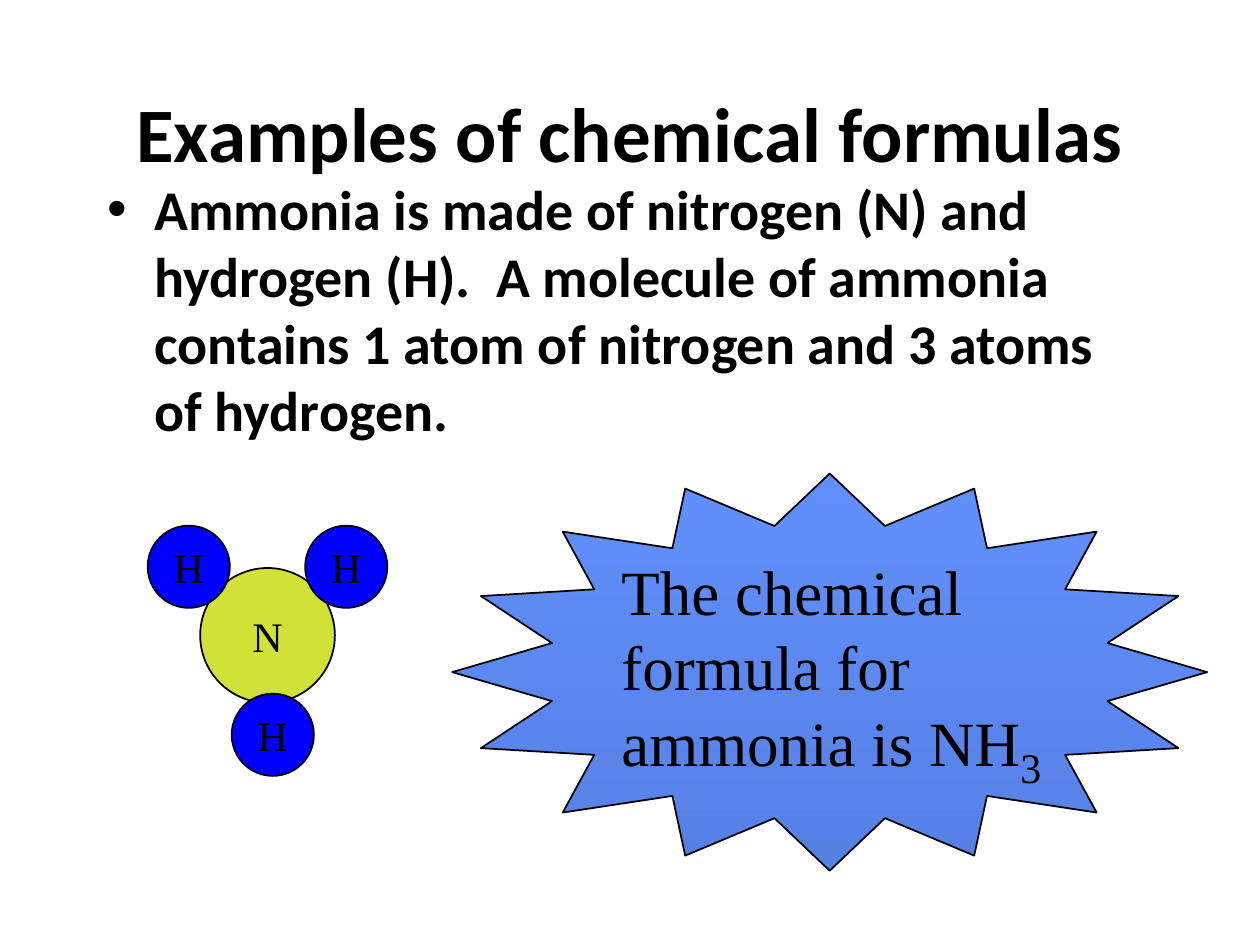
from dataclasses import dataclass

from pptx import Presentation
from pptx.dml.color import RGBColor
from pptx.enum.shapes import MSO_SHAPE
from pptx.enum.text import MSO_ANCHOR, MSO_AUTO_SIZE, PP_ALIGN
from pptx.util import Pt


@dataclass(frozen=True)
class Theme:
    ink: str = "000000"
    core: str = "D1E138"
    atom: str = "0000FF"
    sky: str = "618FFD"
    deep: str = "5780E3"
    sans: str = "Calibri"
    serif: str = "Times New Roman"
    title: int = 44
    body: int = 32
    claim: int = 36
    label: int = 24


def write(frame, text, font, size, color, bold=False, align=None):
    frame.text = text
    par = frame.paragraphs[0]
    par.alignment = align
    par.space_before = Pt(0)
    style = par.runs[0].font
    style.name, style.size, style.bold = font, Pt(size), bold
    style.color.rgb = RGBColor.from_string(color)


class Deck:
    """Draws styled elements on the current slide."""

    def __init__(self, theme):
        self.theme = theme
        self.file = Presentation()
        self.file.slide_width, self.file.slide_height = Pt(720), Pt(540)
        self.slide = self.file.slides.add_slide(self.file.slide_layouts[1])

    def holder(self, index, text, size, box, **form):
        item = self.slide.placeholders[index]
        item.left, item.top, item.width, item.height = map(Pt, box)
        write(item.text_frame, text, self.theme.sans, size, self.theme.ink, bold=True, **form)
        return item

    def group(self):
        return self.slide.shapes.add_group_shape().shapes

    def shape(self, home, kind, box):
        item = home.add_shape(kind, *map(Pt, box))
        item.shadow.inherit = False
        item.line.color.rgb = RGBColor.from_string(self.theme.ink)
        item.line.width = Pt(1)
        return item

    def atom(self, home, text, color, left, top, size):
        item = self.shape(home, MSO_SHAPE.OVAL, (left, top, size, size))
        item.fill.solid()
        item.fill.fore_color.rgb = RGBColor.from_string(color)
        frame = item.text_frame
        frame.word_wrap = False
        frame.vertical_anchor = MSO_ANCHOR.MIDDLE
        write(frame, text, self.theme.serif, self.theme.label, self.theme.ink, align=PP_ALIGN.CENTER)

    def star(self, home, box):
        item = self.shape(home, MSO_SHAPE.STAR_16_POINT, box)
        item.adjustments[0] = 0.375
        item.fill.gradient()
        item.fill.gradient_angle = 270
        for stop, color in zip(item.fill.gradient_stops, (self.theme.sky, self.theme.deep)):
            stop.color.rgb = RGBColor.from_string(color)

    def label(self, home, text, size, box):
        frame = home.add_textbox(*map(Pt, box)).text_frame
        frame.word_wrap = True
        frame.auto_size = MSO_AUTO_SIZE.SHAPE_TO_FIT_TEXT
        write(frame, text, self.theme.serif, size, self.theme.ink)


def main():
    theme = Theme()
    deck = Deck(theme)
    title = deck.holder(0, "Examples of chemical formulas", theme.title,
                        (54, 30, 612, 90), align=PP_ALIGN.CENTER)
    title.text_frame.vertical_anchor = MSO_ANCHOR.MIDDLE
    deck.holder(1, "Ammonia is made of nitrogen (N) and hydrogen (H).  A molecule of ammonia "
                   "contains 1 atom of nitrogen and 3 atoms of hydrogen.",
                theme.body, (54, 96, 612, 324))

    cell = deck.group()
    deck.atom(cell, "N", theme.core, 114.4, 324.6, 77)
    for left, top in ((84.4, 300.4), (132.4, 396.4), (174.4, 300.4)):
        deck.atom(cell, "H", theme.atom, left, top, 47)

    burst = deck.group()
    deck.star(burst, (258.4, 270.6, 431.5, 227))
    deck.label(burst, "The chemical formula for ammonia is NH", theme.claim, (348, 312, 300, 137))
    deck.label(deck.slide.shapes, "3", theme.label, (576, 420, 30, 36))
    deck.file.save("out.pptx")


if __name__ == "__main__":
    main()
